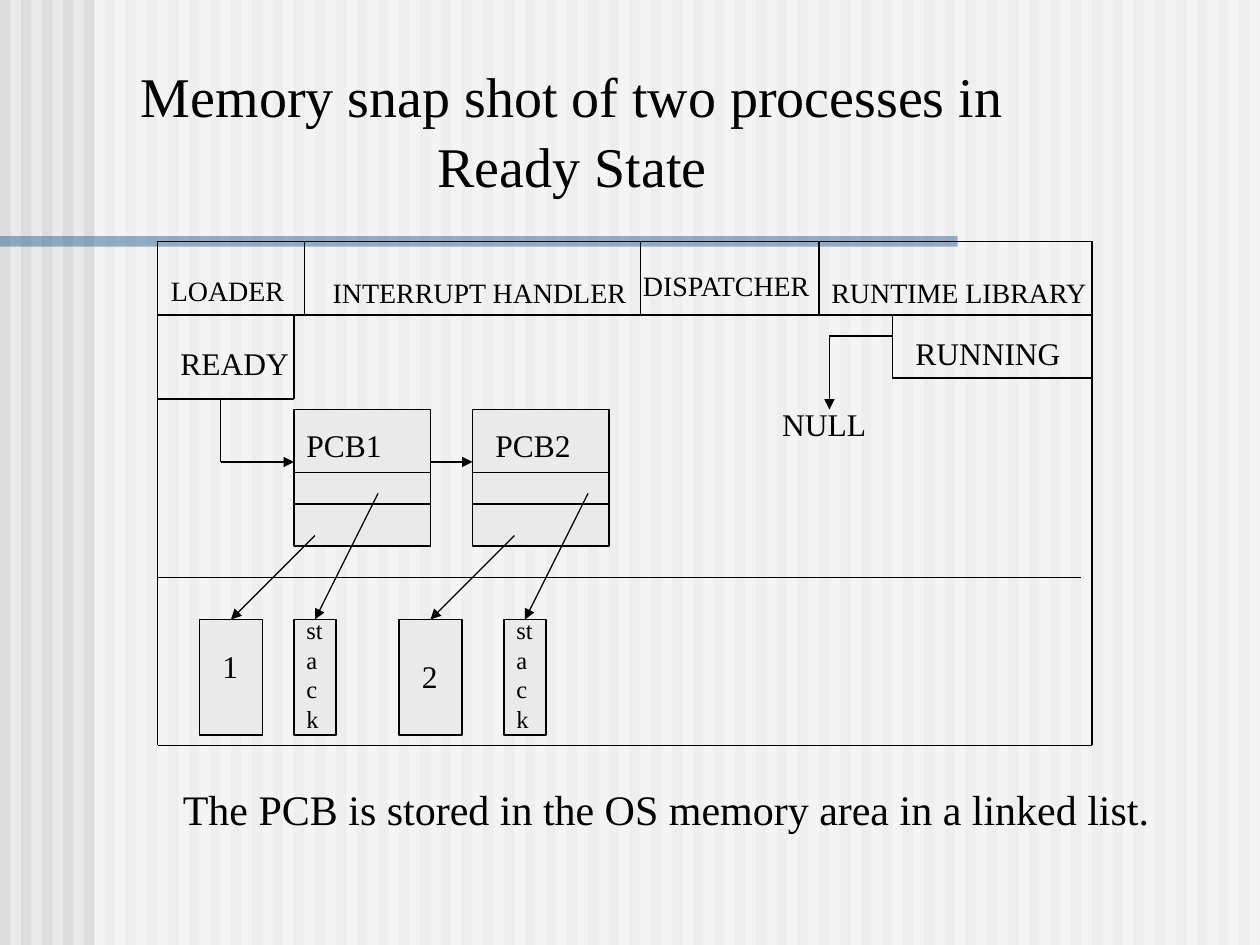
from lxml.etree import SubElement
from pptx import Presentation
from pptx.dml.color import RGBColor
from pptx.enum.shapes import MSO_CONNECTOR, MSO_SHAPE
from pptx.enum.text import MSO_ANCHOR, MSO_AUTO_SIZE, PP_ALIGN
from pptx.oxml.ns import qn
from pptx.util import Inches, Pt

# The slide is a grid of 120 columns by 90 rows, twelve cells to the inch.
CELL = Inches(1) / 12
COLUMNS, ROWS = 120, 90
FONT = "Times New Roman"
COLORS = {"paper": "EAEAEA", "stripe": "DDDDDD", "veil": "FFFFFF",
          "bar": "336699", "ink": "000000"}
LEFT, CENTER = PP_ALIGN.LEFT, PP_ALIGN.CENTER

TITLE = "Memory snap shot of two processes in Ready State"

# Memory map: left, top, right, bottom of the frame and its dividing rows
FRAME = (15, 23, 104, 71)
HEADER_BOTTOM, READY_BOTTOM, RUNNING_BOTTOM = 30, 38, 36
READY_RIGHT, RUNNING_LEFT = 28, 85
HEADER_DIVIDERS = [29, 61, 78]

PCB_TOP, PCB_SIZE, PCB_DIVIDERS = 39, 13, [45, 48]
BLOCK_TOP, BLOCK_HEIGHT = 59, 11
# PCB left, code block left, stack left, starts of the code and stack pointers
PROCESSES = [
    {"pcb": 28, "code": 19, "stack": 28, "pointers": (30, 36)},
    {"pcb": 45, "code": 38, "stack": 48, "pointers": (49, 56)},
]

# Text, point size, alignment, left, top, width, height
LABELS = [
    ("LOADER ", 16, CENTER, 14, 25, 16, 4.8),
    ("INTERRUPT HANDLER ", 16, CENTER, 28, 24, 36, 6),
    ("DISPATCHER ", 16, CENTER, 59, 25, 21, 4.4),
    ("RUNTIME LIBRARY ", 16, LEFT, 78, 24, 28, 6),
    ("READY ", 18, LEFT, 16, 31, 16, 6),
    ("RUNNING ", 18, LEFT, 86, 30, 17, 6),
    ("NULL", 18, CENTER, 71, 38, 15, 4.8),
    ("PCB1", 18, LEFT, 28, 40, 12, 4.8),
    ("PCB2", 18, LEFT, 46, 40, 12, 4.8),
    ("1", 18, LEFT, 20, 61, 4, 4.8),
    ("2", 18, LEFT, 39, 62, 4, 4.8),
    ("stack", 14, LEFT, 28, 58, 4, 12.4),
    ("stack", 14, LEFT, 48, 58, 4, 12.4),
    (" The PCB is stored in the OS memory area in a linked list. ",
     24, CENTER, 15, 74, 97, 6),
]


def cells(*values):
    return [round(value * CELL) for value in values]


def color(name):
    return RGBColor.from_string(COLORS[name])


def add_box(slide, left, top, width, height, fill, alpha=None, outlined=False):
    """Add a rectangle; alpha is its opacity in percent."""
    shape = slide.shapes.add_shape(MSO_SHAPE.RECTANGLE,
                                   *cells(left, top, width, height))
    shape.shadow.inherit = False
    shape.fill.solid()
    shape.fill.fore_color.rgb = color(fill)
    if alpha:
        tint = shape.fill._xPr.find(".//" + qn("a:srgbClr"))
        SubElement(tint, qn("a:alpha"), val=str(alpha * 1000))
    if outlined:
        shape.line.color.rgb = color("ink")
        shape.line.width = Pt(0.75)
    else:
        shape.line.fill.background()


def add_line(slide, x1, y1, x2, y2, arrow=False):
    connector = slide.shapes.add_connector(MSO_CONNECTOR.STRAIGHT,
                                           *cells(x1, y1, x2, y2))
    connector.line.color.rgb = color("ink")
    connector.line.width = Pt(0.75)
    if arrow:
        SubElement(connector.line._get_or_add_ln(), qn("a:tailEnd"), type="triangle")
    SubElement(connector._element.spPr, qn("a:effectLst"))


def write(shape, text, size, alignment, anchor):
    frame = shape.text_frame
    frame.text = text
    frame.word_wrap = True
    frame.auto_size = MSO_AUTO_SIZE.NONE
    frame.vertical_anchor = anchor
    paragraph = frame.paragraphs[0]
    paragraph.alignment = alignment
    font = paragraph.runs[0].font
    font.name, font.size = FONT, Pt(size)
    font.color.rgb = color("ink")


def add_background(slide):
    slide.background.fill.solid()
    slide.background.fill.fore_color.rgb = color("paper")
    for column in range(0, COLUMNS, 2):
        add_box(slide, column, 0, 1, ROWS, "stripe")
    add_box(slide, 9, 0, COLUMNS - 9, ROWS, "veil", alpha=50)
    add_box(slide, 0, 22.5, 91.2, 1, "bar", alpha=50)


def add_title(slide):
    title = slide.shapes.title
    title.left, title.top, title.width, title.height = cells(10, 5, 89, 23.6)
    write(title, TITLE, 32, CENTER, MSO_ANCHOR.TOP)
    title.text_frame.paragraphs[0].line_spacing = 1.04
    slide.shapes._spTree.append(title._element)  # bring above the stripes


def add_memory_map(slide):
    left, top, right, bottom = FRAME
    for y in (top, HEADER_BOTTOM, bottom):
        add_line(slide, left, y, right, y)
    for x in (left, right):
        add_line(slide, x, top, x, bottom)
    for x in HEADER_DIVIDERS:
        add_line(slide, x, top, x, HEADER_BOTTOM)
    add_line(slide, left, 55, right - 1, 55)

    add_line(slide, left, READY_BOTTOM, READY_RIGHT, READY_BOTTOM)
    add_line(slide, READY_RIGHT, HEADER_BOTTOM, READY_RIGHT, READY_BOTTOM)
    add_line(slide, RUNNING_LEFT, HEADER_BOTTOM, RUNNING_LEFT, RUNNING_BOTTOM)
    add_line(slide, RUNNING_LEFT, RUNNING_BOTTOM, right, RUNNING_BOTTOM)


def add_processes(slide):
    for process in PROCESSES:
        pcb, code, stack = process["pcb"], process["code"], process["stack"]
        add_box(slide, pcb, PCB_TOP, PCB_SIZE, PCB_SIZE, "paper", outlined=True)
        for y in PCB_DIVIDERS:
            add_line(slide, pcb, y, pcb + PCB_SIZE, y)
        for x, width in ((code, 6), (stack, 4)):
            add_box(slide, x, BLOCK_TOP, width, BLOCK_HEIGHT, "paper", outlined=True)
        code_pointer, stack_pointer = process["pointers"]
        add_line(slide, code_pointer, 51, code + 3, BLOCK_TOP, arrow=True)
        add_line(slide, stack_pointer, 47, stack + 2, BLOCK_TOP, arrow=True)


def add_queue_links(slide):
    first, second = (process["pcb"] for process in PROCESSES)
    add_line(slide, 21, READY_BOTTOM, 21, 44)
    add_line(slide, 21, 44, first, 44, arrow=True)
    add_line(slide, first + PCB_SIZE, 44, second, 44, arrow=True)
    add_line(slide, RUNNING_LEFT, 32, 79, 32)
    add_line(slide, 79, 32, 79, 39, arrow=True)


def main():
    presentation = Presentation()
    presentation.slide_width, presentation.slide_height = cells(COLUMNS, ROWS)
    slide = presentation.slides.add_slide(presentation.slide_layouts[5])
    add_background(slide)
    add_title(slide)
    add_memory_map(slide)
    add_processes(slide)
    add_queue_links(slide)
    for text, size, alignment, *place in LABELS:
        label = slide.shapes.add_textbox(*cells(*place))
        write(label, text, size, alignment, MSO_ANCHOR.BOTTOM)
    presentation.save("out.pptx")


if __name__ == "__main__":
    main()
